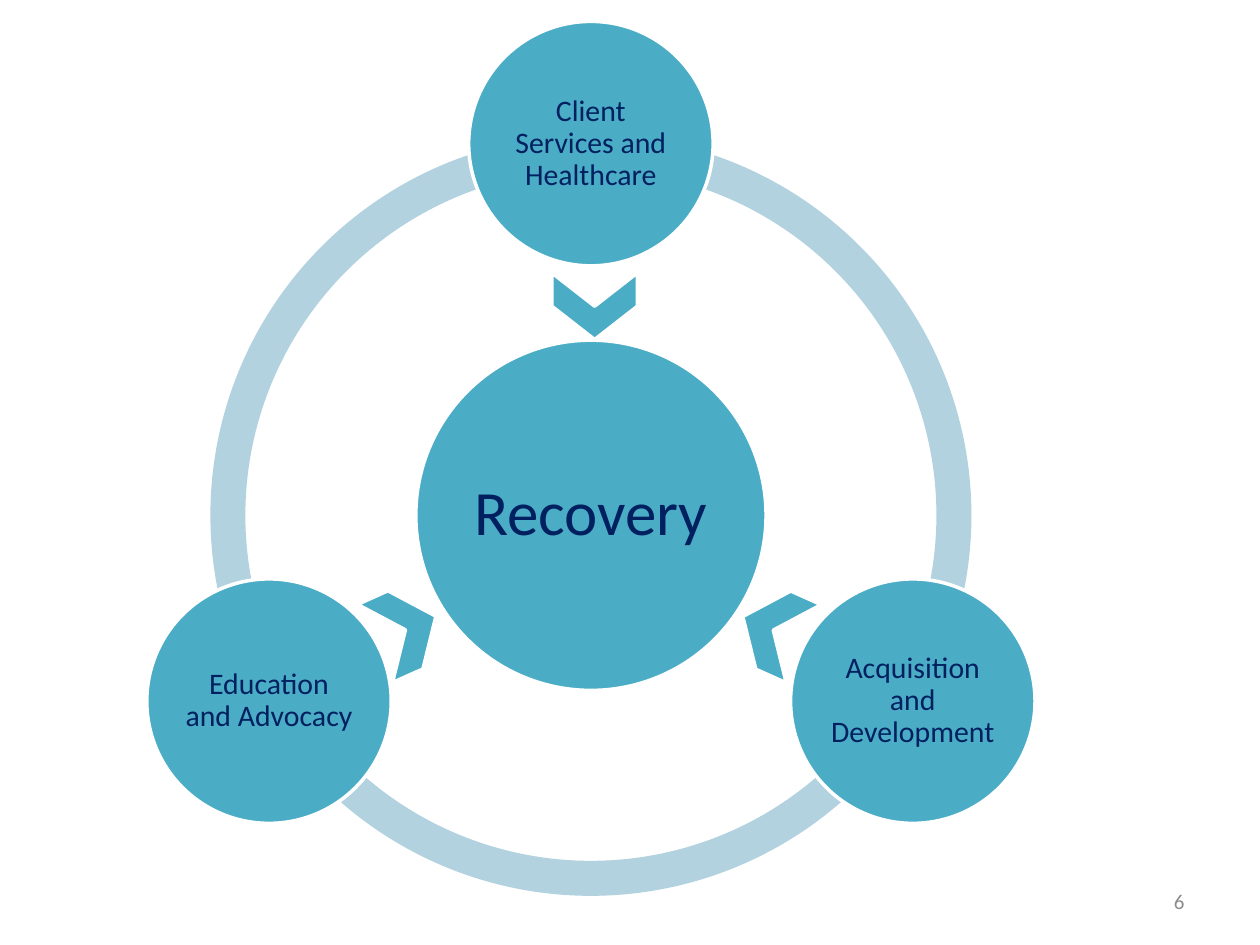
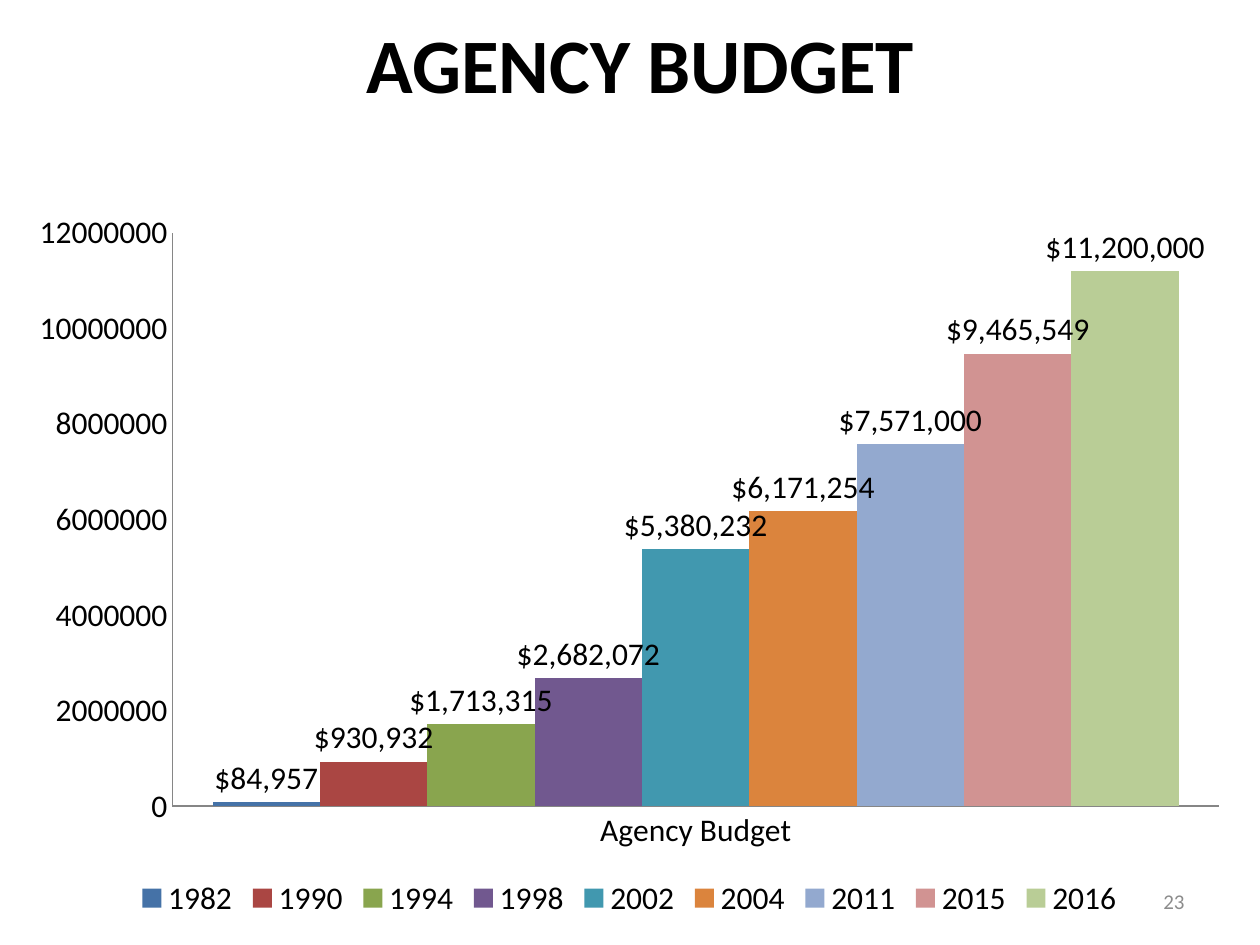
from math import cos, radians, sin

from pptx import Presentation
from pptx.chart.data import CategoryChartData
from pptx.dml.color import RGBColor
from pptx.enum.chart import (XL_CHART_TYPE, XL_LABEL_POSITION,
                             XL_LEGEND_POSITION, XL_TICK_MARK)
from pptx.enum.shapes import MSO_SHAPE
from pptx.enum.text import MSO_ANCHOR, PP_ALIGN
from pptx.util import Inches, Pt

COLUMNS, ROWS = 100, 75
CELL = Inches(10) / COLUMNS

FONT = "Calibri"
BLACK = RGBColor(0x00, 0x00, 0x00)
WHITE = RGBColor(0xFF, 0xFF, 0xFF)
GREY = RGBColor(0x8C, 0x8C, 0x8C)
AXIS_GREY = RGBColor(0x86, 0x86, 0x86)
NAVY = RGBColor(0x00, 0x20, 0x60)
TEAL = RGBColor(0x4B, 0xAC, 0xC6)
PALE_TEAL = RGBColor(0xB2, 0xD2, 0xDF)

HUB_X, HUB_Y = 46.9, 40.9
ORBIT = 29.5
RING_SIZE, HUB_SIZE, GOAL_SIZE = 60.4, 27.8, 19.4
RING_ARCS = [(90, 162), (18, 90), (162, 18)]
GOALS = [
    (-90, "Client Services and Healthcare"),
    (30, "Acquisition and Development"),
    (150, "Education and Advocacy"),
]
CHEVRONS = [(-89, 16.6, 90), (32.2, 17.1, 204.1), (148.3, 17.3, 335.9)]

BUDGETS = [
    ("1982", 84957, RGBColor(0x45, 0x72, 0xA7)),
    ("1990", 930932, RGBColor(0xAA, 0x46, 0x43)),
    ("1994", 1713315, RGBColor(0x89, 0xA5, 0x4E)),
    ("1998", 2682072, RGBColor(0x71, 0x58, 0x8F)),
    ("2002", 5380232, RGBColor(0x41, 0x98, 0xAF)),
    ("2004", 6171254, RGBColor(0xDB, 0x84, 0x3D)),
    ("2011", 7571000, RGBColor(0x93, 0xA9, 0xCF)),
    ("2015", 9465549, RGBColor(0xD1, 0x93, 0x92)),
    ("2016", 11200000, RGBColor(0xB9, 0xCD, 0x96)),
]


def cells(*counts):
    return [round(count * CELL) for count in counts]


def style_font(font, size, color, bold=False):
    font.name = FONT
    font.size = Pt(size)
    font.bold = bold
    font.color.rgb = color


def write(frame, text, size, color, align, anchor, bold=False):
    frame.word_wrap = True
    frame.vertical_anchor = anchor
    frame.text = text
    paragraph = frame.paragraphs[0]
    paragraph.alignment = align
    style_font(paragraph.runs[0].font, size, color, bold)
    return paragraph


def add_page_number(slide, number):
    footer = slide.shapes.add_textbox(*cells(71.7, 69.5, 23.3, 4))
    write(footer.text_frame, number, 12, GREY, PP_ALIGN.RIGHT, MSO_ANCHOR.MIDDLE)


def add_title(slide, text):
    title = slide.shapes.add_textbox(*cells(11.7, 0.8, 78.3, 8.4))
    write(title.text_frame, text, 44, BLACK, PP_ALIGN.CENTER, MSO_ANCHOR.TOP, True)


def around_hub(angle, distance):
    turn = radians(angle)
    return HUB_X + distance * cos(turn), HUB_Y + distance * sin(turn)


def add_centred(slide, preset, centre, width, height, fill, outlined=True):
    x, y = centre
    figure = slide.shapes.add_shape(
        preset, *cells(x - width / 2, y - height / 2, width, height))
    figure.shadow.inherit = False
    figure.fill.solid()
    figure.fill.fore_color.rgb = fill
    if outlined:
        figure.line.color.rgb = WHITE
        figure.line.width = Pt(2)
    else:
        figure.line.fill.background()
    return figure


def add_ring_arc(slide, start, end):
    arc = add_centred(slide, MSO_SHAPE.BLOCK_ARC, (HUB_X, HUB_Y),
                      RING_SIZE, RING_SIZE, PALE_TEAL, outlined=False)
    arc.adjustments[0] = start * 0.6
    arc.adjustments[1] = end * 0.6
    arc.adjustments[2] = 0.046


def add_circle(slide, centre, size, text, text_size, inset):
    circle = add_centred(slide, MSO_SHAPE.OVAL, centre, size, size, TEAL)
    frame = circle.text_frame
    frame.margin_left = frame.margin_right = Inches(inset)
    frame.margin_top = frame.margin_bottom = Inches(inset)
    label = write(frame, text, text_size, NAVY, PP_ALIGN.CENTER, MSO_ANCHOR.MIDDLE)
    label.line_spacing = 0.9


def add_chevron(slide, angle, distance, rotation):
    chevron = add_centred(slide, MSO_SHAPE.CHEVRON, around_hub(angle, distance),
                          5.3, 6.8, TEAL)
    chevron.rotation = rotation


def style_axis(axis):
    axis.has_major_gridlines = False
    axis.major_tick_mark = XL_TICK_MARK.NONE
    axis.minor_tick_mark = XL_TICK_MARK.NONE
    axis.format.line.color.rgb = AXIS_GREY
    axis.format.line.width = Pt(0.75)


def add_budget_chart(slide):
    budget = CategoryChartData(number_format="General")
    budget.categories = ["Agency Budget"]
    for year, amount, _ in BUDGETS:
        budget.add_series(year, [amount])
    chart = slide.shapes.add_chart(XL_CHART_TYPE.COLUMN_CLUSTERED,
                                   *cells(1.2, 15.8, 97.5, 57.5), budget).chart
    style_font(chart.font, 18, BLACK)
    chart.has_title = False
    chart.has_legend = True
    chart.legend.position = XL_LEGEND_POSITION.BOTTOM
    chart.legend.include_in_layout = False
    style_axis(chart.category_axis)
    style_axis(chart.value_axis)
    chart.value_axis.minimum_scale = 0
    chart.value_axis.maximum_scale = 12000000
    chart.value_axis.major_unit = 2000000

    plot = chart.plots[0]
    plot.vary_by_categories = False
    plot.gap_width = 75
    plot.overlap = 0
    for column, (_, _, color) in zip(plot.series, BUDGETS):
        column.format.fill.solid()
        column.format.fill.fore_color.rgb = color
        labels = column.data_labels
        labels.show_value = True
        labels.number_format = "$#,##0"
        labels.number_format_is_linked = False
        labels.position = XL_LABEL_POSITION.OUTSIDE_END


def build_recovery_slide(slide):
    add_page_number(slide, "6")
    for start, end in RING_ARCS:
        add_ring_arc(slide, start, end)
    add_circle(slide, (HUB_X, HUB_Y), HUB_SIZE, "Recovery", 36, 0.05)
    for angle, goal in GOALS:
        add_circle(slide, around_hub(angle, ORBIT), GOAL_SIZE, goal, 17, 0.02)
    for angle, distance, rotation in CHEVRONS:
        add_chevron(slide, angle, distance, rotation)


def build_budget_slide(slide):
    add_page_number(slide, "23")
    add_budget_chart(slide)
    add_title(slide, "AGENCY BUDGET")


def main():
    deck = Presentation()
    deck.slide_width, deck.slide_height = cells(COLUMNS, ROWS)
    blank = deck.slide_layouts[6]
    for build in (build_recovery_slide, build_budget_slide):
        build(deck.slides.add_slide(blank))
    deck.save("out.pptx")


if __name__ == "__main__":
    main()
